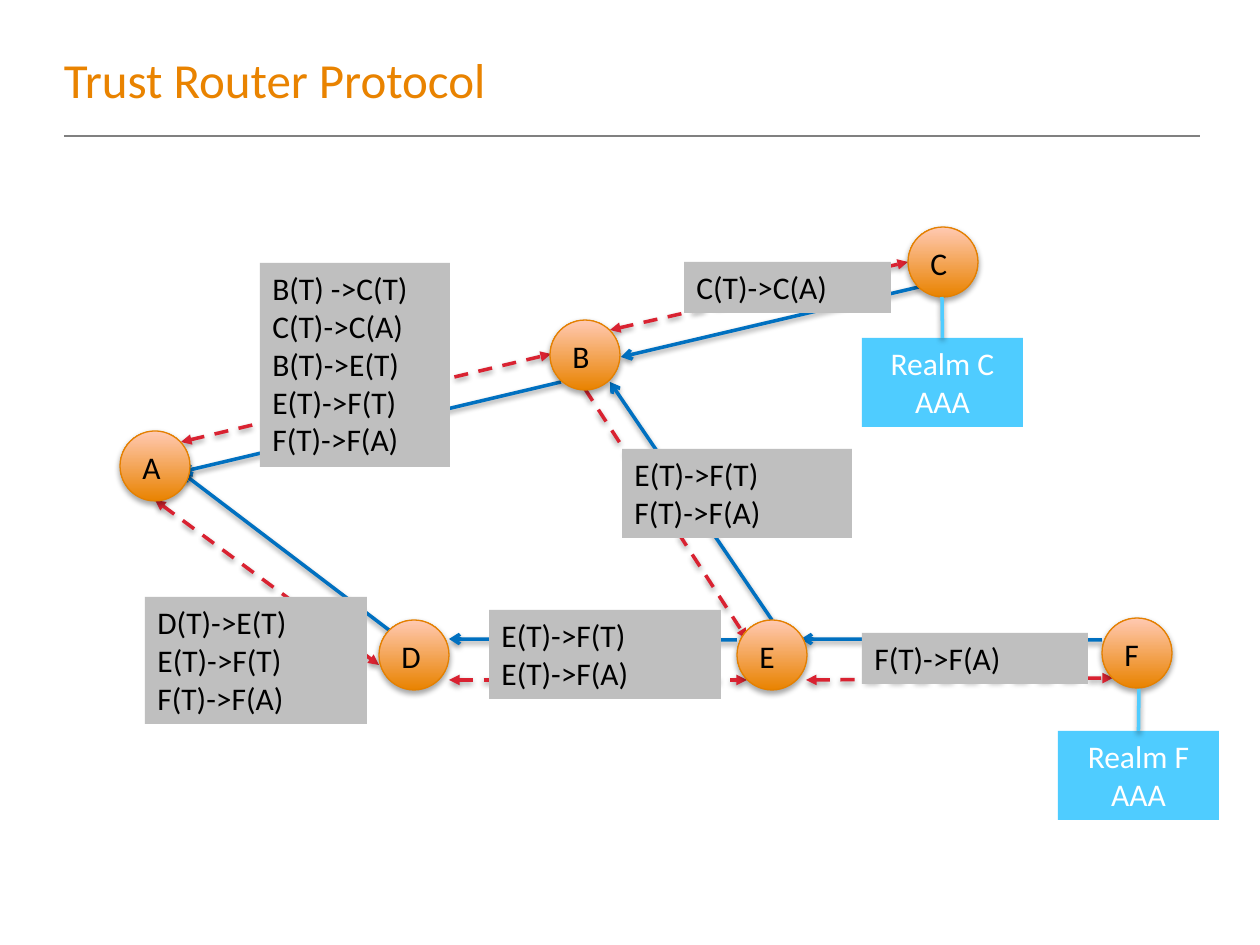
"""Build the Trust Router Protocol slide: routers, trust links and realm servers."""
from dataclasses import dataclass
from typing import Any

from lxml.etree import SubElement
from pptx import Presentation
from pptx.dml.color import RGBColor
from pptx.enum.dml import MSO_LINE
from pptx.enum.shapes import MSO_CONNECTOR, MSO_SHAPE
from pptx.enum.text import MSO_ANCHOR, MSO_AUTO_SIZE, PP_ALIGN
from pptx.oxml.ns import qn
from pptx.util import Emu, Pt

PX_PER_INCH = 126
NODE_SIZE = 70
COLORS = {
    "title": "E98300", "rule": "808080", "request": "D92231", "route": "0070C0",
    "label": "BFBFBF", "realm": "4FCCFF", "node_edge": "E48000",
    "node_dark": "E98300", "node_light": "FFC9B2", "ink": "000000", "white": "FFFFFF",
}
GROWING = {"word_wrap": True, "auto_size": MSO_AUTO_SIZE.SHAPE_TO_FIT_TEXT,
           "vertical_anchor": MSO_ANCHOR.TOP}
TITLE_FRAME = {"margin_left": 0, "margin_top": 0, "margin_right": 0, "margin_bottom": 0,
               "word_wrap": True, "auto_size": MSO_AUTO_SIZE.NONE,
               "vertical_anchor": MSO_ANCHOR.MIDDLE}


@dataclass
class Link:
    start: tuple[int, int]
    end: tuple[int, int]
    kind: str
    both_ways: bool = False


@dataclass
class Node:
    name: str
    left: int
    top: int


@dataclass
class Label:
    left: int
    top: int
    width: int
    height: int
    lines: list[str]


LINKS = [
    Link((155, 500), (379, 665), "request", True),
    Link((389, 630), (181, 472), "route"),
    Link((449, 680), (747, 680), "request", True),
    Link((737, 640), (449, 639), "route"),
    Link((806, 680), (1113, 678), "request", True),
    Link((1102, 640), (801, 639), "route"),
    Link((585, 389), (747, 639), "request"),
    Link((772, 620), (610, 382), "route"),
    Link((919, 287), (621, 357), "route"),
    Link((610, 330), (908, 262), "request", True),
    Link((561, 382), (181, 472), "route"),
    Link((181, 442), (551, 354), "request", True),
]
LABELS = [
    Label(260, 263, 190, 204,
          ["B(T) ->C(T)", "C(T)->C(A)", "B(T)->E(T)", "E(T)->F(T)", "F(T)->F(A)"]),
    Label(684, 262, 207, 51, ["C(T)->C(A)"]),
    Label(622, 449, 230, 89, ["E(T)->F(T)", "F(T)->F(A)"]),
    Label(145, 597, 222, 127, ["D(T)->E(T)", "E(T)->F(T)", "F(T)->F(A)"]),
    Label(489, 610, 232, 89, ["E(T)->F(T)", "E(T)->F(A)"]),
    Label(862, 633, 226, 51, ["F(T)->F(A)"]),
]
NODES = [Node("B", 550, 320), Node("F", 1102, 618), Node("D", 379, 620),
         Node("E", 737, 620), Node("C", 908, 227), Node("A", 120, 431)]
REALMS = [
    (Label(862, 338, 161, 89, ["Realm C", "AAA"]), (942, 297)),
    (Label(1058, 731, 161, 89, ["Realm F", "AAA"]), (1139, 689)),
]


def px(*lengths: int) -> list[Emu]:
    return [Emu(round(length * 914400 / PX_PER_INCH)) for length in lengths]


def rgb(name: str) -> RGBColor:
    return RGBColor.from_string(COLORS[name])


def apply(target: Any, values: dict[str, Any]) -> None:
    for name, value in values.items():
        setattr(target, name, value)


def add_shadow(effects: Any, distance: int, alpha: int) -> None:
    shadow = SubElement(effects, qn("a:outerShdw"), blurRad="40000", dist=str(distance),
                        dir="5400000", rotWithShape="0")
    color = SubElement(shadow, qn("a:srgbClr"), val=COLORS["ink"])
    SubElement(color, qn("a:alpha"), val=str(alpha * 1000))


def write(frame: Any, lines: list[str], color: str, size: int = 18,
          align: PP_ALIGN = PP_ALIGN.LEFT) -> None:
    frame.text = "\n".join(lines)
    for para in frame.paragraphs:
        para.alignment = align
        for span in para.runs:
            apply(span.font, {"name": "Calibri", "size": Pt(size)})
            span.font.color.rgb = rgb(color)


def add_line(page: Any, start: tuple[int, int], end: tuple[int, int], color: str,
             width: int = 2, shadow: bool = True) -> Any:
    line = page.shapes.add_connector(MSO_CONNECTOR.STRAIGHT, *px(*start, *end))
    line.line.color.rgb = rgb(color)
    line.line.width = Pt(width)
    effects = SubElement(line._element.spPr, qn("a:effectLst"))
    if shadow:
        add_shadow(effects, 20000, 38)
    return line


def add_link(page: Any, link: Link) -> None:
    line = add_line(page, link.start, link.end, link.kind).line
    head = "arrow"
    if link.kind == "request":
        line.dash_style = MSO_LINE.DASH
        head = "triangle"
    outline = line._get_or_add_ln()
    if link.both_ways:
        SubElement(outline, qn("a:headEnd"), type=head)
    SubElement(outline, qn("a:tailEnd"), type=head)


def add_box(page: Any, label: Label, fill: str, ink: str, align: PP_ALIGN) -> Any:
    box = page.shapes.add_shape(
        MSO_SHAPE.RECTANGLE, *px(label.left, label.top, label.width, label.height))
    box.shadow.inherit = False
    box.fill.solid()
    box.fill.fore_color.rgb = rgb(fill)
    box.line.fill.background()
    apply(box.text_frame, GROWING)
    write(box.text_frame, label.lines, ink, align=align)
    return box


def add_node(page: Any, node: Node) -> None:
    group = page.shapes.add_group_shape()
    circle = group.shapes.add_shape(
        MSO_SHAPE.OVAL, *px(node.left, node.top, NODE_SIZE, NODE_SIZE))
    circle.fill.gradient()
    circle.fill.gradient_angle = 90
    for stop, color in zip(circle.fill.gradient_stops, ("node_dark", "node_light")):
        stop.color.rgb = rgb(color)
    circle.line.color.rgb = rgb("node_edge")
    circle.line.width = Pt(0.75)
    circle.shadow.inherit = False
    add_shadow(circle._element.spPr.find(qn("a:effectLst")), 23000, 35)
    box = group.shapes.add_textbox(*px(node.left + 10, node.top + 11, NODE_SIZE, 51))
    apply(box.text_frame, GROWING)
    write(box.text_frame, [node.name], "ink")


def add_title(page: Any, text: str) -> None:
    title = page.shapes.title
    apply(title, dict(zip(("left", "top", "width", "height"), px(64, 45, 948, 68))))
    apply(title.text_frame, TITLE_FRAME)
    write(title.text_frame, [text], "title", 28)


def main() -> None:
    deck = Presentation()
    deck.slide_width, deck.slide_height = px(1260, 945)
    page = deck.slides.add_slide(deck.slide_layouts[5])
    add_title(page, "Trust Router Protocol")
    add_line(page, (64, 136), (1200, 136), "rule", 1, shadow=False)
    for link in LINKS:
        add_link(page, link)
    for label in LABELS:
        add_box(page, label, "label", "ink", PP_ALIGN.LEFT)
    for node in NODES:
        add_node(page, node)
    for realm, start in REALMS:
        box = add_box(page, realm, "realm", "white", PP_ALIGN.CENTER)
        line = add_line(page, start, (realm.left + realm.width // 2, realm.top), "realm")
        line.end_connect(box, 0)
    deck.save("out.pptx")


if __name__ == "__main__":
    main()
